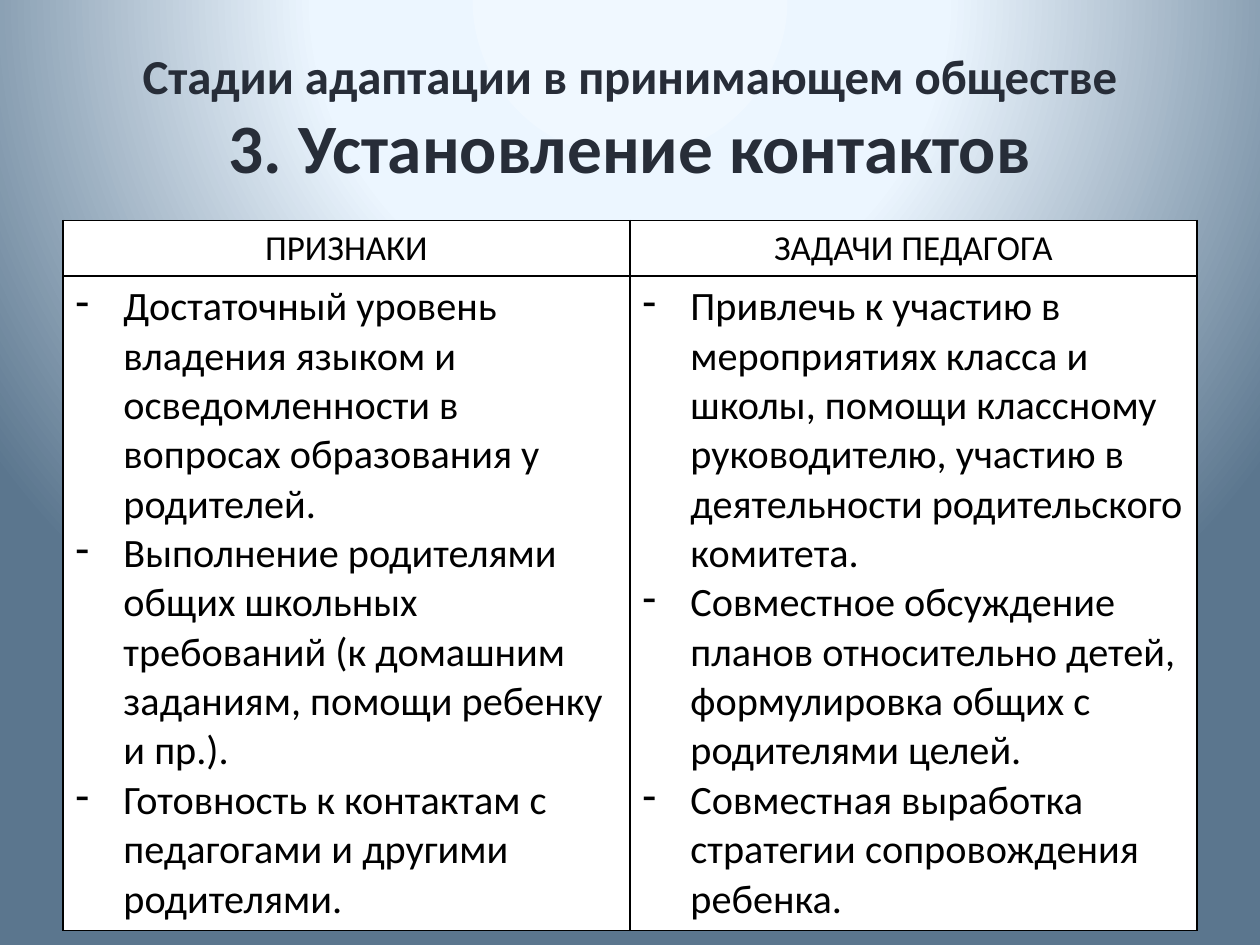
from copy import deepcopy

from lxml import etree
from pptx import Presentation
from pptx.dml.color import RGBColor
from pptx.enum.text import MSO_ANCHOR, MSO_AUTO_SIZE, PP_ALIGN
from pptx.oxml.ns import qn
from pptx.util import Inches, Pt

CENTER, LEFT = PP_ALIGN.CENTER, PP_ALIGN.LEFT
MIDDLE = MSO_ANCHOR.MIDDLE
NO_FIT = MSO_AUTO_SIZE.NONE
TITLE_ONLY = 5
COLUMNS, ROWS = 100, 75

TITLE = [("Стадии адаптации в принимающем обществе", 27.9),
         ("3. Установление контактов", 39.6)]
HEADINGS = ["ПРИЗНАКИ", "ЗАДАЧИ ПЕДАГОГА"]
SIGNS = [
    "Достаточный уровень владения языком и осведомленности в вопросах образования у родителей.",
    "Выполнение родителями общих школьных требований (к домашним заданиям, помощи ребенку и пр.).",
    "Готовность к контактам с педагогами и другими родителями.",
]
TASKS = [
    "Привлечь к участию в мероприятиях класса и школы, помощи классному руководителю, "
    "участию в деятельности родительского комитета.",
    "Совместное обсуждение планов относительно детей, формулировка общих с родителями целей.",
    "Совместная выработка стратегии сопровождения ребенка.",
]


def color(value):
    return RGBColor.from_string(value)


def add_element(parent, tag, **attributes):
    return etree.SubElement(parent, qn(tag), {key: str(value) for key, value in attributes.items()})


class SlideBuilder:
    font = "Calibri"
    title_color = "272D38"
    ink = "000000"
    paper = "FFFFFF"
    indent = Inches(0.38)

    def __init__(self, deck):
        self.deck = deck
        self.page = deck.slides.add_slide(deck.slide_layouts[TITLE_ONLY])

    def x(self, columns):
        return round(self.deck.slide_width * columns / COLUMNS)

    def y(self, rows):
        return round(self.deck.slide_height * rows / ROWS)

    def style(self, span, size, ink, bold=False):
        span.font.name = self.font
        span.font.size = Pt(size)
        span.font.bold = bold
        span.font.color.rgb = color(ink)

    def background(self, stops):
        fill = self.page.background.fill
        fill.gradient()
        gradient = self.page.background._cSld.find(".//" + qn("a:gradFill"))
        for child in list(gradient):
            gradient.remove(child)
        stop_list = add_element(gradient, "a:gsLst")
        for position, value in stops:
            stop = add_element(stop_list, "a:gs", pos=position * 1000)
            add_element(stop, "a:srgbClr", val=value)
        circle = add_element(gradient, "a:path", path="circle")
        add_element(circle, "a:fillToRect", l=50000, t=-80000, r=50000, b=180000)

    def title(self, lines, left, top, width, height):
        box = self.page.shapes.title
        box.left, box.top = self.x(left), self.y(top)
        box.width, box.height = self.x(width), self.y(height)
        frame = box.text_frame
        frame.text = "\v".join(text for text, size in lines)
        frame.auto_size = NO_FIT
        frame.vertical_anchor = MIDDLE
        para = frame.paragraphs[0]
        para.alignment = CENTER
        for span, (text, size) in zip(para.runs, lines):
            self.style(span, size, self.title_color, True)
        line_break = para._p.find(qn("a:br"))
        line_break.insert(0, deepcopy(para.runs[0]._r.rPr))

    def table(self, grid, left, top, width, heights):
        frame = self.page.shapes.add_table(len(grid), len(grid[0]), self.x(left), self.y(top),
                                           self.x(width), self.y(sum(heights)))
        for row, height in zip(frame.table.rows, heights):
            row.height = self.y(height)
        for row, contents in enumerate(grid):
            for column, lines in enumerate(contents):
                self.cell(frame.table.cell(row, column), lines, heading=row == 0)

    def cell(self, cell, lines, heading):
        cell.text_frame.text = "\n".join(lines)
        for para in cell.text_frame.paragraphs:
            para.alignment = CENTER if heading else LEFT
            if not heading:
                self.dash(para)
            for span in para.runs:
                self.style(span, 20 if heading else 23, self.ink)
        self.borders(cell)
        cell.fill.solid()
        cell.fill.fore_color.rgb = color(self.paper)

    def dash(self, para):
        properties = para._p.get_or_add_pPr()
        properties.set("marL", str(self.indent))
        properties.set("indent", str(-self.indent))
        add_element(properties, "a:buFontTx")
        add_element(properties, "a:buChar", char="-")

    def borders(self, cell):
        properties = cell._tc.get_or_add_tcPr()
        for side in ("a:lnL", "a:lnR", "a:lnT", "a:lnB"):
            line = add_element(properties, side, w=Pt(1))
            add_element(add_element(line, "a:solidFill"), "a:srgbClr", val=self.ink)


def main():
    deck = Presentation()
    deck.slide_width, deck.slide_height = Inches(10), Inches(7.5)
    builder = SlideBuilder(deck)
    builder.background([(0, "F0F8FF"), (40, "ECF6FF"), (100, "5B768E")])
    builder.title(TITLE, left=5, top=3, width=90, height=12.5)
    grid = [[[heading] for heading in HEADINGS], [SIGNS, TASKS]]
    builder.table(grid, left=5, top=17.5, width=90, heights=[4.4, 51.9])
    deck.save("out.pptx")


if __name__ == "__main__":
    main()
